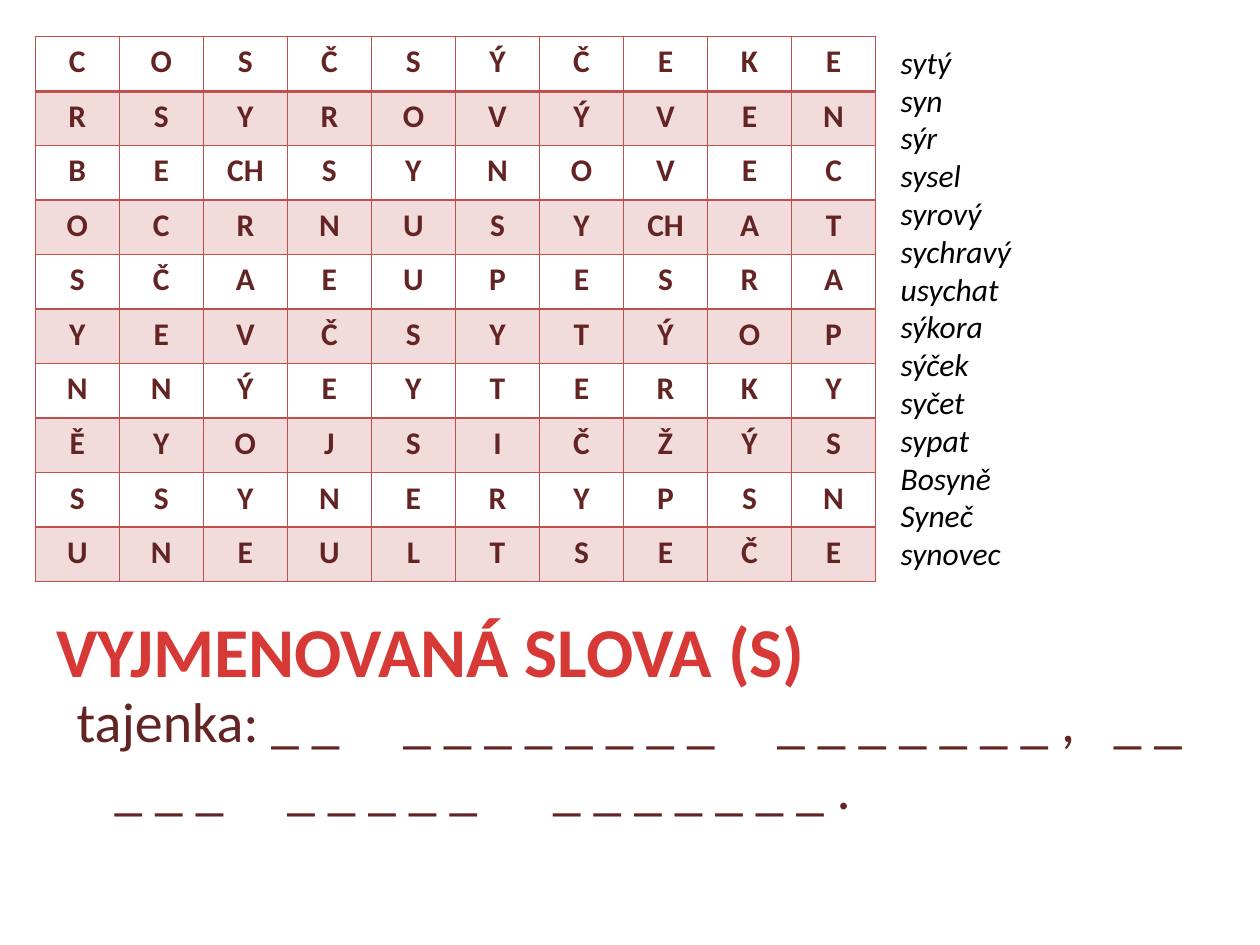
"""Build a Czech word-search slide with its word list and puzzle line."""
from dataclasses import dataclass

from lxml import etree
from pptx import Presentation
from pptx.dml.color import RGBColor
from pptx.enum import text
from pptx.oxml import ns
from pptx.util import Inches, Pt

LETTERS = [
    "C O S Č S Ý Č E K E",
    "R S Y R O V Ý V E N",
    "B E CH S Y N O V E C",
    "O C R N U S Y CH A T",
    "S Č A E U P E S R A",
    "Y E V Č S Y T Ý O P",
    "N N Ý E Y T E R K Y",
    "Ě Y O J S I Č Ž Ý S",
    "S S Y N E R Y P S N",
    "U N E U L T S E Č E",
]
WORDS = [
    "sytý", "syn", "sýr", "sysel", "syrový", "sychravý", "usychat",
    "sýkora", "sýček", "syčet", "sypat", "Bosyně", "Syneč", "synovec",
]
TITLE = "VYJMENOVANÁ SLOVA (S)"
PUZZLE = [
    ("tajenka: _ _\t_ _ _ _ _ _ _ _\t_ _ _ _ _ _ _ ,\t_ _", (2.59, 5.56, 8.23)),
    ("\t_ _ _\t_ _ _ _ _\t_ _ _ _ _ _ _ .", (0.3, 1.67, 3.78)),
]


@dataclass(frozen=True)
class Theme:
    font: str = "Calibri"
    dark: str = "632523"
    black: str = "000000"
    title: str = "D73A36"
    accent: str = "C0504D"
    band_opacity: int = 20
    body_size: int = 18
    puzzle_size: int = 32
    title_size: int = 40
    thin: int = 1
    thick: int = 2


THEME = Theme()


def add_run(paragraph, content, size, color, bold=False, italic=False):
    run = paragraph.add_run()
    run.text = content
    font = run.font
    font.name, font.size = THEME.font, Pt(size)
    font.bold, font.italic = bold, italic
    font.color.rgb = RGBColor.from_string(color)


def add_child(parent, tag, **attributes):
    return etree.SubElement(parent, ns.qn(tag), **attributes)


def add_border(cell, side, width):
    line = add_child(cell._tc.get_or_add_tcPr(), f"a:ln{side}", w=str(Pt(width)))
    fill = add_child(line, "a:solidFill")
    add_child(fill, "a:srgbClr", val=THEME.accent)


def fill_cell(cell, banded):
    if not banded:
        cell.fill.background()
        return
    cell.fill.solid()
    cell.fill.fore_color.rgb = RGBColor.from_string(THEME.accent)
    color = cell._tc.tcPr.find(".//" + ns.qn("a:solidFill") + "[last()]/" + ns.qn("a:srgbClr"))
    color = cell._tc.tcPr.findall(ns.qn("a:solidFill"))[-1][0]
    add_child(color, "a:alpha", val=str(THEME.band_opacity * 1000))


def add_letter_grid(slide, left, top, width, height):
    rows = [row.split() for row in LETTERS]
    frame = slide.shapes.add_table(
        len(rows), len(rows[0]), Inches(left), Inches(top), Inches(width), Inches(height))
    table = frame.table
    table.first_row = table.horz_banding = False
    for row_index, row in enumerate(rows):
        for column_index, letter in enumerate(row):
            cell = table.cell(row_index, column_index)
            widths = {
                "L": THEME.thin,
                "R": THEME.thin,
                "T": THEME.thick if row_index == 1 else THEME.thin,
                "B": THEME.thick if row_index == 0 else THEME.thin,
            }
            for side, border_width in widths.items():
                add_border(cell, side, border_width)
            fill_cell(cell, row_index % 2 == 1)
            paragraph = cell.text_frame.paragraphs[0]
            paragraph.alignment = text.PP_ALIGN.CENTER
            add_run(paragraph, letter, THEME.body_size, THEME.dark, bold=True)


def add_text(slide, left, top, width, height, lines, **style):
    box = slide.shapes.add_textbox(Inches(left), Inches(top), Inches(width), Inches(height))
    frame = box.text_frame
    frame.word_wrap = True
    for index, (content, stops) in enumerate(lines):
        paragraph = frame.paragraphs[0] if index == 0 else frame.add_paragraph()
        if stops:
            tabs = add_child(paragraph._p.get_or_add_pPr(), "a:tabLst")
            for stop in stops:
                add_child(tabs, "a:tab", pos=str(Inches(stop)), algn="l")
        add_run(paragraph, content, **style)


def main():
    presentation = Presentation()
    presentation.slide_width, presentation.slide_height = Inches(10), Inches(7.5)
    slide = presentation.slides.add_slide(presentation.slide_layouts[6])
    add_letter_grid(slide, 0.28, 0.29, 6.67, 4.33)
    add_text(slide, 7.05, 0.29, 2.83, 4.34, [(word, ()) for word in WORDS],
             size=THEME.body_size, color=THEME.black, italic=True)
    add_text(slide, 0.35, 4.77, 9.13, 0.77, [(TITLE, ())],
             size=THEME.title_size, color=THEME.title, bold=True)
    add_text(slide, 0.51, 5.4, 9.21, 1.18, PUZZLE,
             size=THEME.puzzle_size, color=THEME.dark)
    presentation.save("out.pptx")


if __name__ == "__main__":
    main()
